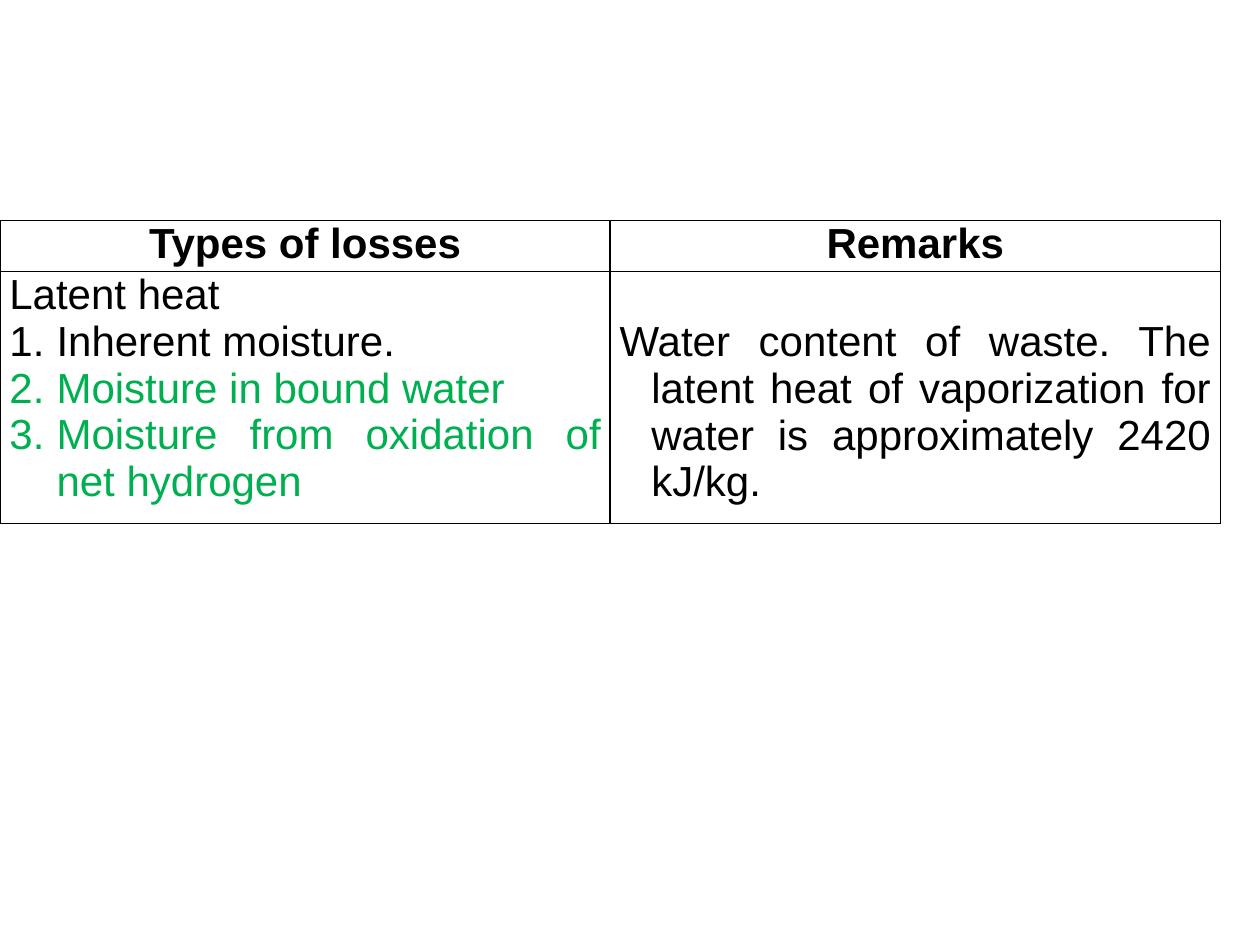
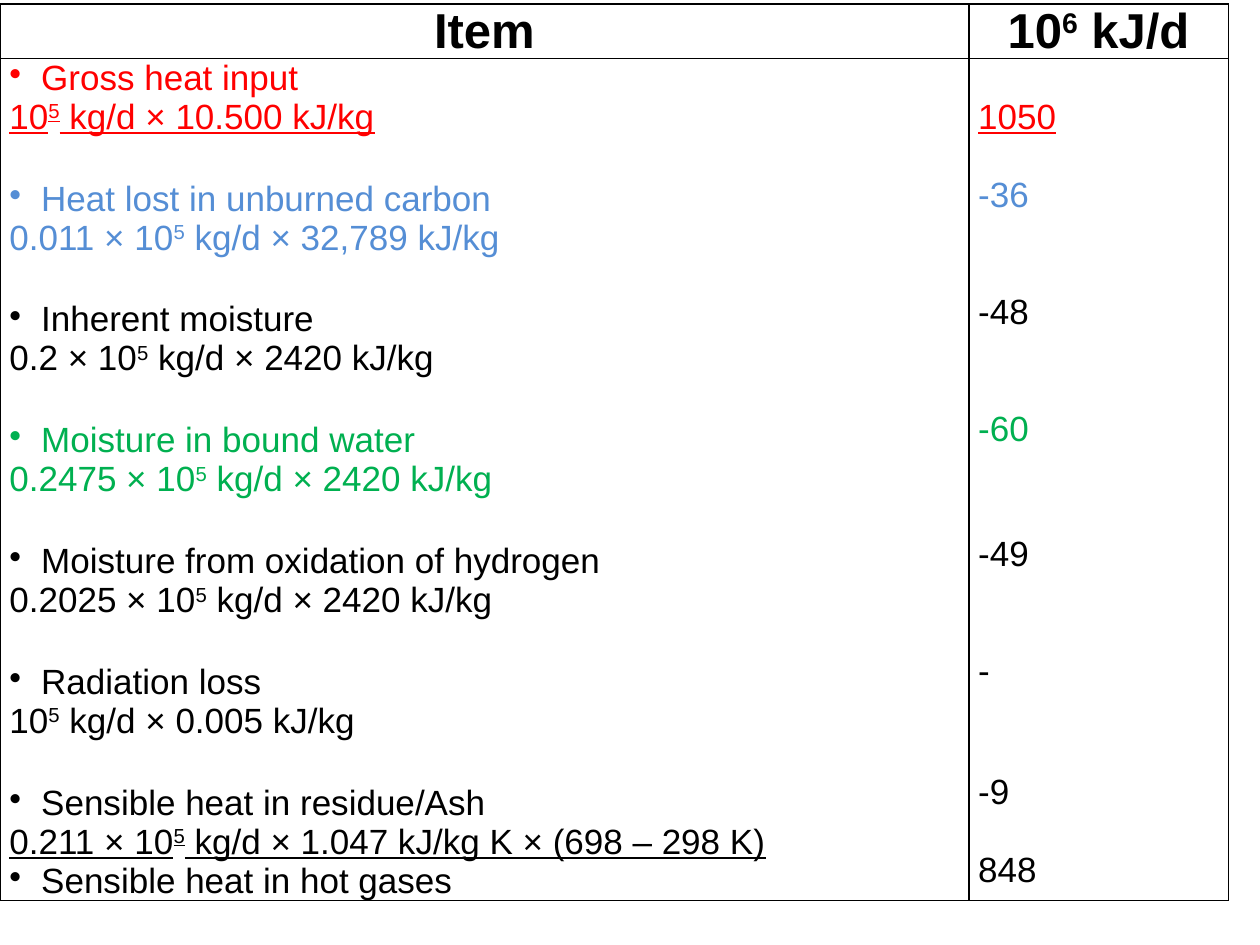
from lxml import etree
from pptx import Presentation
from pptx.dml.color import RGBColor
from pptx.enum.text import PP_ALIGN
from pptx.oxml import parse_xml
from pptx.oxml.ns import nsdecls, qn
from pptx.util import Cm, Pt

CENTER, JUSTIFY = PP_ALIGN.CENTER, PP_ALIGN.JUSTIFY
FONT = "Arial"
BLACK, RED, BLUE, GREEN = "000000", "FF0000", "558ED5", "00B050"
DOT = ("a:buChar", "char", "•")
NUMBER = ("a:buAutoNum", "type", "arabicPeriod")
HANG, HANG_NUMBER = Cm(0.64), Cm(0.95)


def add_line(cell, text, size, color=BLACK, bullet=None, underline=False, gap=0, header=False):
    tf = cell.text_frame
    p = tf.paragraphs[0] if not tf.text else tf.add_paragraph()
    p.alignment = CENTER if header else JUSTIFY
    p.space_before = Pt(gap)
    pPr = p._p.get_or_add_pPr()
    hang = HANG_NUMBER if bullet == NUMBER else HANG
    pPr.set("marL", str(hang))
    pPr.set("indent", str(-hang))
    if bullet:
        tag, key, value = bullet
        etree.SubElement(pPr, qn(tag)).set(key, value)
    else:
        etree.SubElement(pPr, qn("a:buNone"))
    base, *powers = text.split("^")
    parts = [(base, False)]
    for power in powers:
        parts += [(power[0], True), (power[1:], False)]
    for part, raised in parts:
        r = p.add_run()
        r.text = part
        r.font.name = FONT
        r.font.size = Pt(size)
        r.font.bold = header
        r.font.underline = underline
        r.font.color.rgb = RGBColor.from_string(color)
        if raised:
            r.font._element.set("baseline", "30000")


def add_grid(s, top, widths, heights, headers, header_size):
    table = s.shapes.add_table(2, 2, 0, Cm(top), Cm(sum(widths)), Cm(sum(heights))).table
    table.first_row = table.horz_banding = False
    for i in range(2):
        table.columns[i].width = Cm(widths[i])
        table.rows[i].height = Cm(heights[i])
    for cell in table.iter_cells():
        cell.margin_left = cell.margin_right = Cm(0.19)
        cell.margin_top = cell.margin_bottom = 0
        tcPr = cell._tc.get_or_add_tcPr()
        for side in "LRTB":
            tcPr.append(parse_xml(
                f'<a:ln{side} {nsdecls("a")} w="12700"><a:solidFill>'
                f'<a:srgbClr val="{BLACK}"/></a:solidFill></a:ln{side}>'))
        cell.fill.background()
    for col, text in enumerate(headers):
        add_line(table.cell(0, col), text, header_size, header=True)
    return table.cell(1, 0), table.cell(1, 1)


prs = Presentation()
prs.slide_width, prs.slide_height = Cm(25.4), Cm(19.05)
blank = prs.slide_layouts[6]

s = prs.slides.add_slide(blank)
losses, remarks = add_grid(s, 4.45, (12.3, 12.3), (1.02, 5.08), ("Types of losses", "Remarks"), 24)
add_line(losses, "Latent heat", 24)
for text, color in [
    ("Inherent moisture.", BLACK),
    ("Moisture in bound water", GREEN),
    ("Moisture from oxidation of net hydrogen", GREEN),
]:
    add_line(losses, text, 24, color, NUMBER)
remarks.margin_top = Cm(0.95)
add_line(remarks, "Water content of waste. The latent heat of vaporization for water "
                  "is approximately 2420 kJ/kg.", 24)

s = prs.slides.add_slide(blank)
items, values = add_grid(s, 0.08, (19.53, 5.23), (1.1, 16.97), ("Item", "10^6 kJ/d"), 28)
values.margin_top = Cm(0.79)
for name, formula, value, color, underline, item_gap, value_gap in [
    ("Gross heat input", "10^5 kg/d × 10.500 kJ/kg", "1050", RED, True, 0, 0),
    ("Heat lost in unburned carbon", "0.011 × 10^5 kg/d × 32,789 kJ/kg", "-36", BLUE, False, 24.4, 22.3),
    ("Inherent moisture", "0.2 × 10^5 kg/d × 2420 kJ/kg", "-48", BLACK, False, 24.4, 44.6),
    ("Moisture in bound water", "0.2475 × 10^5 kg/d × 2420 kJ/kg", "-60", GREEN, False, 24.4, 44.6),
    ("Moisture from oxidation of hydrogen", "0.2025 × 10^5 kg/d × 2420 kJ/kg", "-49", BLACK, False, 24.4, 48.8),
    ("Radiation loss", "10^5 kg/d × 0.005 kJ/kg", "-", BLACK, False, 24.4, 44.6),
    ("Sensible heat in residue/Ash", "0.211 × 10^5 kg/d × 1.047 kJ/kg K × (698 – 298 K)", "-9",
     BLACK, True, 24.4, 46.7),
    ("Sensible heat in hot gases", None, "848", BLACK, False, 0, 22.3),
]:
    add_line(items, name, 20, color, DOT, gap=item_gap)
    if formula:
        add_line(items, formula, 20, color, underline=underline)
    add_line(values, value, 20, color, underline=value == "1050", gap=value_gap)

prs.save("out.pptx")
